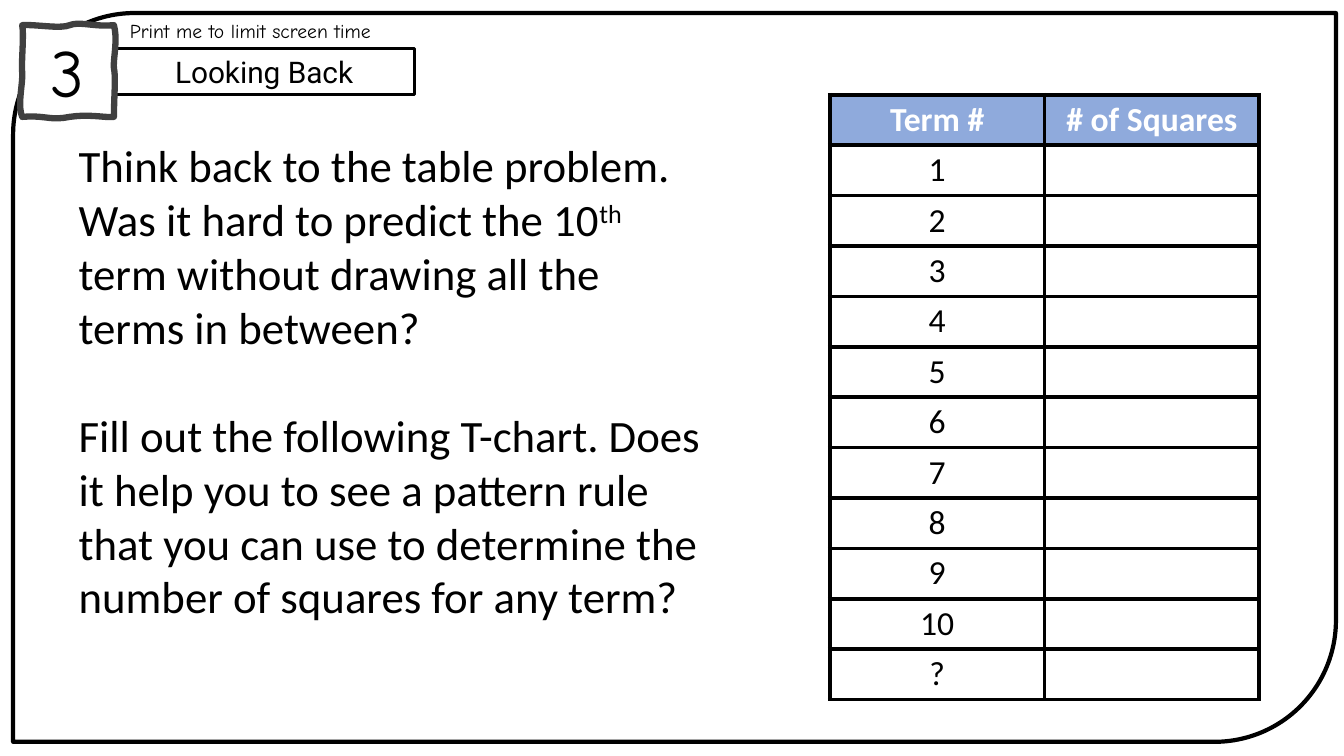
"""Build the "Looking Back" slide with its question and T-chart."""
from lxml.etree import SubElement
from pptx import Presentation
from pptx.dml.color import RGBColor
from pptx.enum.shapes import MSO_SHAPE
from pptx.enum.text import MSO_ANCHOR, MSO_AUTO_SIZE, PP_ALIGN
from pptx.oxml import parse_xml
from pptx.oxml.ns import nsdecls, qn
from pptx.util import Pt

PX = 9144
colour = RGBColor.from_string


def place(*lengths):
    """Turn px lengths into EMU."""
    return [round(length * PX) for length in lengths]


def write(paragraph, text, size=24, font="Calibri", color="000000",
          bold=False, align=PP_ALIGN.LEFT, baseline=0):
    """Add a formatted run to a paragraph."""
    paragraph.alignment = align
    run = paragraph.add_run()
    run.text = text
    run.font.size = Pt(size)
    run.font.name = font
    run.font.bold = bold
    run.font.color.rgb = colour(color)
    if baseline:
        run.font._element.set("baseline", str(baseline))


presentation = Presentation()
presentation.slide_width, presentation.slide_height = place(1333, 750)
slide = presentation.slides.add_slide(presentation.slide_layouts[1])
slide.background.fill.solid()
slide.background.fill.fore_color.rgb = colour("FFFFFF")

heading = slide.shapes.title
heading.left, heading.top, heading.width, heading.height = place(113, 48, 298, 46)
heading.fill.solid()
heading.fill.fore_color.rgb = colour("FFFFFF")
heading.line.color.rgb = colour("000000")
heading.line.width = Pt(2.25)
heading.text_frame.auto_size = MSO_AUTO_SIZE.NONE
heading.text_frame.vertical_anchor = MSO_ANCHOR.MIDDLE
write(heading.text_frame.paragraphs[0], "Looking Back", size=21.3,
      font="Roboto", align=PP_ALIGN.CENTER)

question = slide.placeholders[1]
question.left, question.top, question.width, question.height = place(68, 132, 651, 495)
question.text_frame.auto_size = MSO_AUTO_SIZE.NONE
question.text_frame.vertical_anchor = MSO_ANCHOR.TOP
reflection = question.text_frame.paragraphs[0]
instruction = question.text_frame.add_paragraph()
for paragraph, gap in ((reflection, 0), (instruction, 39)):
    paragraph.space_before = Pt(gap)
    properties = paragraph._p.get_or_add_pPr()
    properties.set("marL", "0")
    properties.set("indent", "0")
    SubElement(properties, qn("a:buNone"))
write(reflection, "Think back to the table problem. Was it hard to predict the 10", size=32)
write(reflection, "th", size=32, baseline=30000)
write(reflection, " term without drawing all the terms in between?", size=32)
write(instruction, "Fill out the following T-chart. Does it help you to see a pattern "
      "rule that you can use to determine the number of squares for any term?", size=32)

frame = slide.shapes.add_shape(MSO_SHAPE.ROUND_2_DIAG_RECTANGLE, *place(13, 13, 1312, 723))
frame.shadow.inherit = False
frame.fill.background()
frame.line.color.rgb = colour("000000")
frame.line.width = Pt(3)

START = (22, 25)
CURVES = [
    ((36, 24), (59, 29), (69, 25)),
    ((80, 21), (93, 27), (113, 25)),
    ((117, 40), (112, 59), (113, 68)),
    ((115, 77), (113, 95), (113, 116)),
    ((103, 117), (90, 113), (69, 116)),
    ((49, 120), (45, 114), (22, 116)),
    ((17, 104), (23, 82), (22, 72)),
    ((21, 62), (24, 35), (22, 25)),
]
STEPS = 10
corner = START
outline = []
for first, second, end in CURVES:
    for step in range(1, STEPS + 1):
        t = step / STEPS
        weights = ((1 - t) ** 3, 3 * t * (1 - t) ** 2, 3 * t ** 2 * (1 - t), t ** 3)
        outline.append(place(*(
            sum(weight * point[axis] for weight, point in zip(weights, (corner, first, second, end)))
            for axis in (0, 1))))
    corner = end
sketch = slide.shapes.build_freeform(*place(*START))
sketch.add_line_segments(outline, close=True)
number = sketch.convert_to_shape()
number.shadow.inherit = False
number.fill.solid()
number.fill.fore_color.rgb = colour("FFFFFF")
number.line.color.rgb = colour("404040")
number.line.width = Pt(4.5)
number.text_frame.vertical_anchor = MSO_ANCHOR.MIDDLE
write(number.text_frame.paragraphs[0], "3", size=48, font="Comic Neue", align=PP_ALIGN.CENTER)

terms = [*map(str, range(1, 11)), "?"]
rows = [("Term #", "# of Squares"), *((term, "") for term in terms)]
chart = slide.shapes.add_table(len(rows), 2, *place(823, 94, 426, 50 * len(rows))).table
for row, texts in enumerate(rows):
    header = row == 0
    for column, text in enumerate(texts):
        cell = chart.cell(row, column)
        cell.margin_top, cell.margin_bottom = place(4, 4)
        cell.vertical_anchor = MSO_ANCHOR.MIDDLE
        for side in ("lnL", "lnR", "lnT", "lnB"):
            cell._tc.get_or_add_tcPr().append(parse_xml(
                f'<a:{side} {nsdecls("a")} w="{Pt(3)}"><a:solidFill>'
                f'<a:srgbClr val="000000"/></a:solidFill></a:{side}>'))
        if header:
            cell.fill.solid()
            cell.fill.fore_color.rgb = colour("8FAADC")
        else:
            cell.fill.background()
        if text:
            write(cell.text_frame.paragraphs[0], text, bold=header,
                  color="FFFFFF" if header else "000000", align=PP_ALIGN.CENTER)

print_hint = slide.shapes.add_textbox(*place(119, 14, 314, 34))
print_hint.text_frame.word_wrap = True
write(print_hint.text_frame.paragraphs[0], "Print me to limit screen time",
      size=14, font="Comic Neue")

presentation.save("out.pptx")
